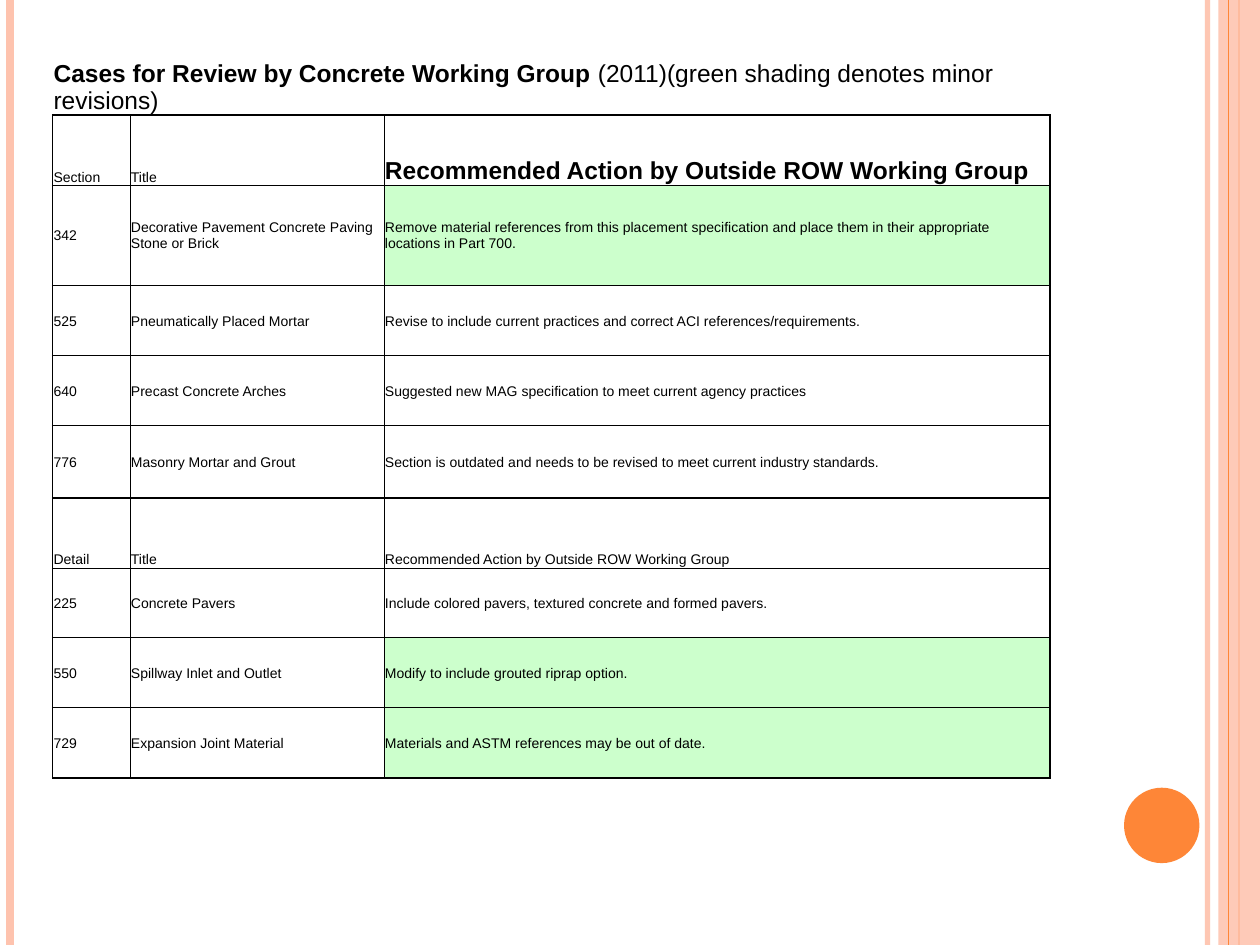
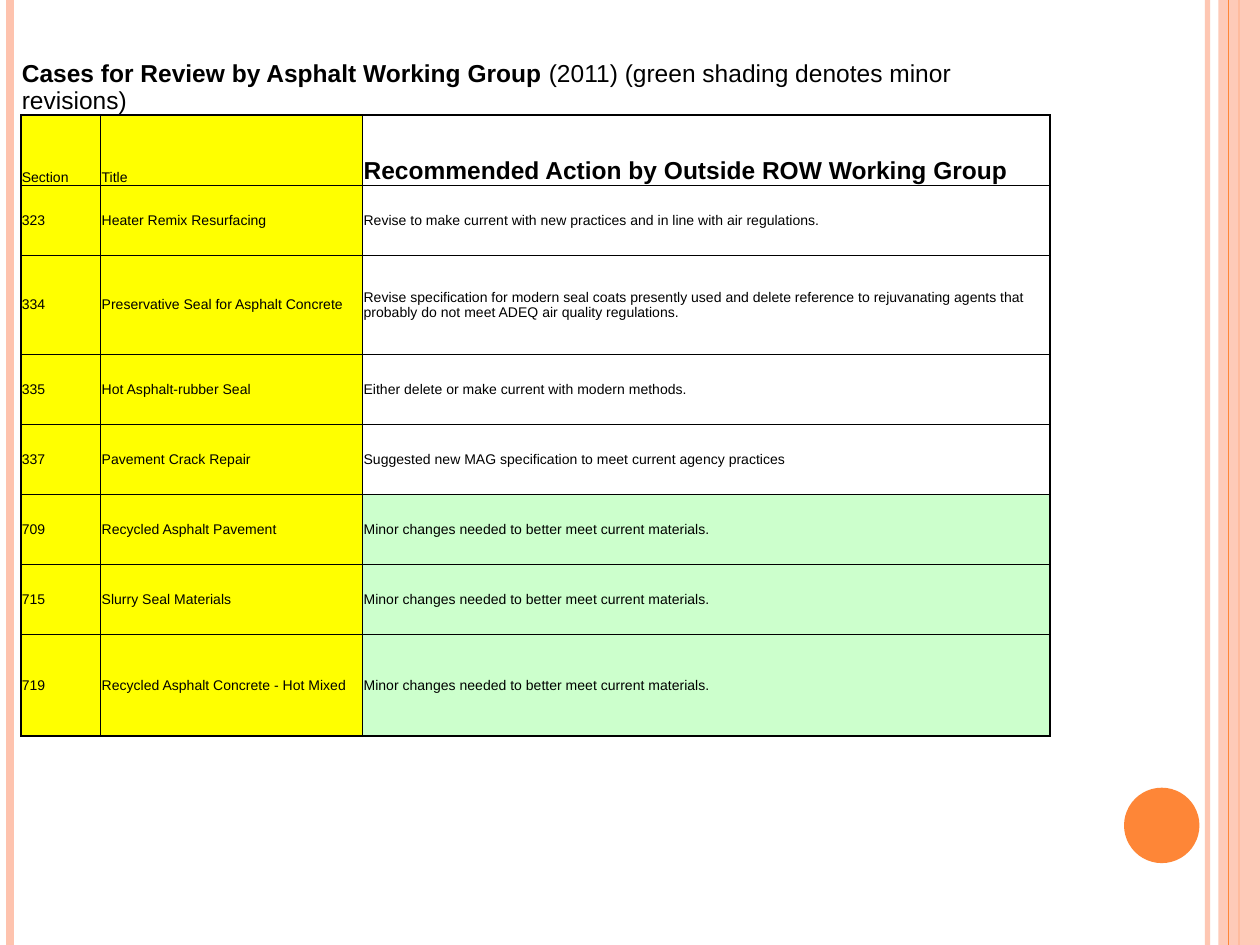
from lxml import etree
from pptx import Presentation
from pptx.dml.color import RGBColor
from pptx.enum.shapes import MSO_CONNECTOR, MSO_SHAPE
from pptx.enum.text import MSO_ANCHOR
from pptx.oxml.ns import qn
from pptx.util import Cm, Pt

STRAIGHT = MSO_CONNECTOR.STRAIGHT
RECTANGLE, OVAL = MSO_SHAPE.RECTANGLE, MSO_SHAPE.OVAL
BOTTOM, MIDDLE = MSO_ANCHOR.BOTTOM, MSO_ANCHOR.MIDDLE

COLORS = {
    "peach": "FEC3AE",
    "orange": "FE8637",
    "green": "CCFFCC",
    "yellow": "FFFF00",
    "black": "000000",
}
FONT = "Arial"
PLAIN_TABLE = "{2D5ABB26-0587-4C30-8999-92F81FD0307C}"
SLIDE_W, SLIDE_H = 25.4, 19.05
ROW, TALL_ROW = 1.41, 2.03
THIN, THICK = 0.5, 1
ACTION_HEADING = "Recommended Action by Outside ROW Working Group"
SUGGESTED = "Suggested new MAG specification to meet current agency practices"
MINOR = "Minor changes needed to better meet current materials."

# Each group: heading of its first column, size of the action heading, and
# its cases as (number, title, action, minor revision, row height)
CONCRETE = [
    ("Section", 14, [
        ("342", "Decorative Pavement Concrete Paving Stone or Brick",
         "Remove material references from this placement specification and "
         "place them in their appropriate locations in Part 700.", True, TALL_ROW),
        ("525", "Pneumatically Placed Mortar",
         "Revise to include current practices and correct ACI "
         "references/requirements.", False, ROW),
        ("640", "Precast Concrete Arches", SUGGESTED, False, ROW),
        ("776", "Masonry Mortar and Grout",
         "Section is outdated and needs to be revised to meet current "
         "industry standards.", False, 1.46),
    ]),
    ("Detail", 8, [
        ("225", "Concrete Pavers",
         "Include colored pavers, textured concrete and formed pavers.", False, ROW),
        ("550", "Spillway Inlet and Outlet",
         "Modify to include grouted riprap option.", True, ROW),
        ("729", "Expansion Joint Material",
         "Materials and ASTM references may be out of date.", True, ROW),
    ]),
]
ASPHALT = [
    ("Section", 14, [
        ("323", "Heater Remix Resurfacing",
         "Revise to make current with new practices and in line with air "
         "regulations.", False, ROW),
        ("334", "Preservative Seal for Asphalt Concrete",
         "Revise specification for modern seal coats presently used and delete "
         "reference to rejuvanating agents that probably do not meet ADEQ air "
         "quality regulations.", False, 2.0),
        ("335", "Hot Asphalt-rubber Seal",
         "Either delete or make current with modern methods.", False, ROW),
        ("337", "Pavement Crack Repair", SUGGESTED, False, ROW),
        ("709", "Recycled Asphalt Pavement", MINOR, True, ROW),
        ("715", "Slurry Seal Materials", MINOR, True, ROW),
        ("719", "Recycled Asphalt Concrete - Hot Mixed", MINOR, True, 2.06),
    ]),
]


def rgb(name):
    return RGBColor.from_string(COLORS[name])


def set_alpha(sp, percent):
    color = next(sp._element.spPr.iter(qn("a:srgbClr")))
    etree.SubElement(color, qn("a:alpha"), val=str(percent * 1000))


def add_stripe(slide, x, width, color):
    line = slide.shapes.add_connector(STRAIGHT, Cm(x), 0, Cm(x), Cm(SLIDE_H))
    line.line.color.rgb = rgb(color)
    line.line.width = Pt(width)
    etree.SubElement(line._element.spPr, qn("a:effectLst"))
    return line


def add_block(slide, shape, x, y, w, h, color):
    sp = slide.shapes.add_shape(shape, Cm(x), Cm(y), Cm(w), Cm(h))
    sp.shadow.inherit = False
    sp.fill.solid()
    sp.fill.fore_color.rgb = rgb(color)
    sp.line.fill.background()
    return sp


def add_frame(slide):
    """Stripes at both sides and the disc at lower right."""
    set_alpha(add_stripe(slide, 24.34, 3, "peach"), 93)
    add_stripe(slide, 0.21, 4.5, "peach")
    add_stripe(slide, 24.98, 1.5, "orange")
    band = add_block(slide, RECTANGLE, SLIDE_W - 0.84, 0, 0.84, SLIDE_H, "peach")
    set_alpha(band, 87)
    add_stripe(slide, 24.77, 0.75, "orange")
    add_block(slide, OVAL, 22.66, 15.88, 1.52, 1.52, "orange")


def set_borders(cell, left=0, right=0, top=0, bottom=0):
    tcPr = cell._tc.get_or_add_tcPr()
    for side, width in zip("LRTB", (left, right, top, bottom)):
        ln = etree.SubElement(tcPr, qn(f"a:ln{side}"), w=str(Pt(width)))
        if width:
            fill = etree.SubElement(ln, qn("a:solidFill"))
            etree.SubElement(fill, qn("a:srgbClr"), val=COLORS["black"])
        else:
            etree.SubElement(ln, qn("a:noFill"))


def style_cell(cell, anchor, fill=None):
    cell.vertical_anchor = anchor
    cell.margin_left = cell.margin_right = cell.margin_top = Cm(0.02)
    cell.margin_bottom = 0
    if fill:
        cell.fill.solid()
        cell.fill.fore_color.rgb = rgb(fill)
    else:
        cell.fill.background()


def style_font(font, size, bold=False):
    font.name = FONT
    font.size = Pt(size)
    font.bold = bold
    font.color.rgb = rgb("black")


def fill_title_row(table, title, note):
    for cell in table.rows[0].cells:
        set_borders(cell, bottom=THICK)
    cell = table.cell(0, 0)
    cell.merge(table.cell(0, 2))
    style_cell(cell, BOTTOM)
    p = cell.text_frame.paragraphs[0]
    for text, bold in ((title + " ", True), (note, False)):
        r = p.add_run()
        r.text = text
        style_font(r.font, 14, bold)


def fill_row(row, texts, fills, anchor, action_size=8, first=False, last=False):
    for col, (cell, text, fill) in enumerate(zip(row.cells, texts, fills)):
        set_borders(cell,
                    left=THICK if col == 0 else THIN,
                    right=THICK if col == 2 else THIN,
                    top=THICK if first else THIN,
                    bottom=THICK if last else THIN)
        style_cell(cell, anchor, fill)
        p = cell.text_frame.paragraphs[0]
        p.text = text
        size = action_size if col == 2 else 8
        style_font(p.font, size, size > 8)


def add_case_table(slide, x, y, widths, title_h, title, note, groups, key_fill):
    heights = [title_h]
    for _, _, cases in groups:
        heights += [ROW] + [case[-1] for case in cases]
    frame = slide.shapes.add_table(len(heights), 3, Cm(x), Cm(y),
                                   Cm(sum(widths)), Cm(sum(heights)))
    table = frame.table
    table.first_row = table.horz_banding = False
    table._tbl.tblPr.find(qn("a:tableStyleId")).text = PLAIN_TABLE
    for column, width in zip(table.columns, widths):
        column.width = Cm(width)
    for row, height in zip(table.rows, heights):
        row.height = Cm(height)

    fill_title_row(table, title, note)
    rows = iter(list(table.rows)[1:])
    for heading, action_size, cases in groups:
        fill_row(next(rows), (heading, "Title", ACTION_HEADING),
                 (key_fill, key_fill, None), BOTTOM, action_size, first=True)
        for case in cases:
            number, name, action, minor, _ = case
            fill_row(next(rows), (number, name, action),
                     (key_fill, key_fill, "green" if minor else None),
                     MIDDLE, last=case is cases[-1])


def main():
    prs = Presentation()
    prs.slide_width, prs.slide_height = Cm(SLIDE_W), Cm(SLIDE_H)
    tables = [
        (1.06, 0.84, (1.56, 5.12, 13.43), 1.48,
         "Cases for Review by Concrete Working Group",
         "(2011)(green shading denotes minor revisions)", CONCRETE, None),
        (0.42, 0.63, (1.61, 5.28, 13.86), 1.69,
         "Cases for Review by Asphalt Working Group",
         "(2011) (green shading denotes minor revisions)", ASPHALT, "yellow"),
    ]
    for args in tables:
        slide = prs.slides.add_slide(prs.slide_layouts[6])
        add_frame(slide)
        add_case_table(slide, *args)
    prs.save("out.pptx")


if __name__ == "__main__":
    main()
